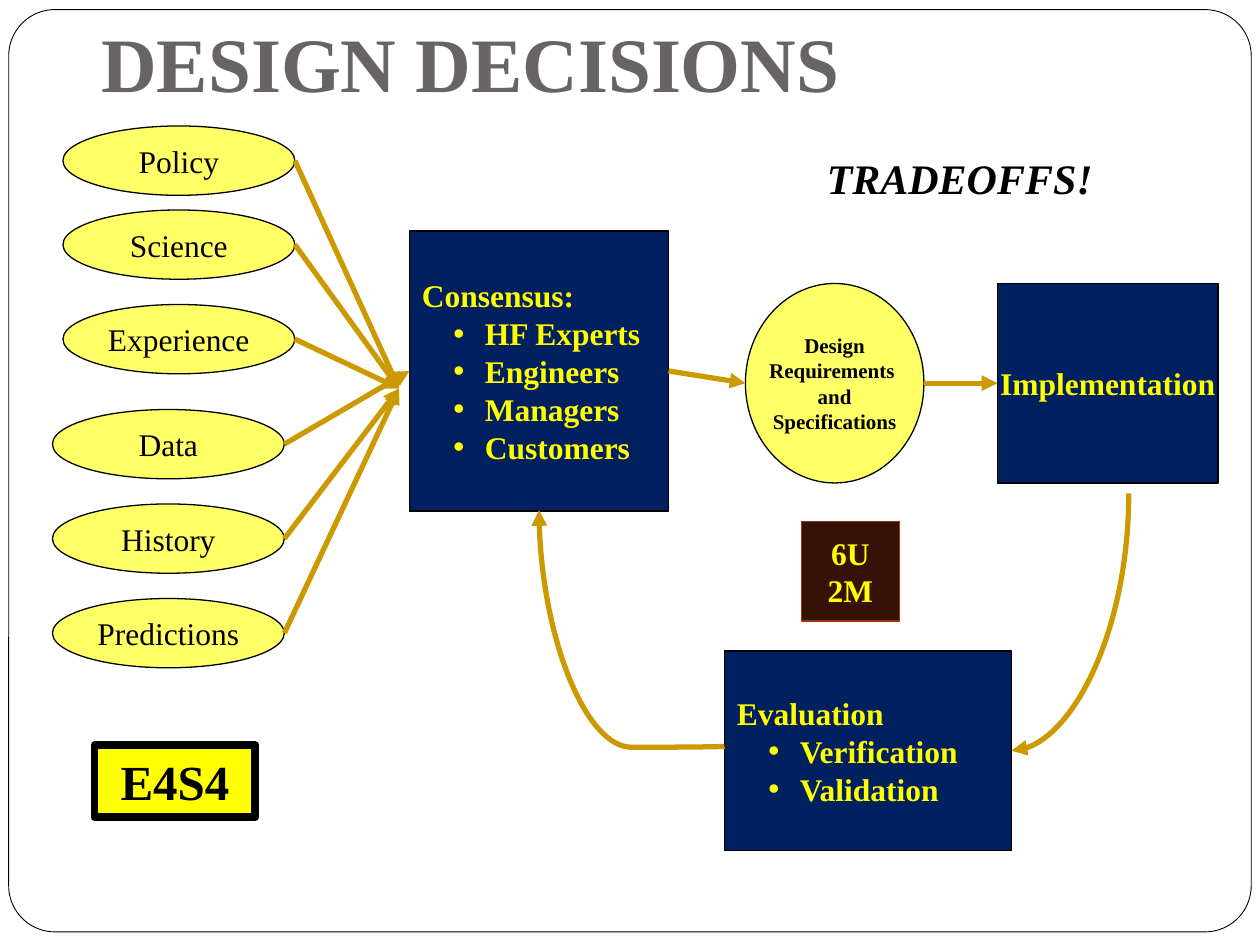
from lxml import etree
from pptx import Presentation
from pptx.dml.color import RGBColor
from pptx.enum.shapes import MSO_CONNECTOR, MSO_SHAPE
from pptx.enum.text import MSO_ANCHOR, MSO_AUTO_SIZE, PP_ALIGN
from pptx.oxml.ns import qn
from pptx.util import Pt

STRAIGHT, CURVE = MSO_CONNECTOR.STRAIGHT, MSO_CONNECTOR.CURVE
RECTANGLE, ELLIPSE = MSO_SHAPE.RECTANGLE, MSO_SHAPE.OVAL
ROUNDED = MSO_SHAPE.ROUNDED_RECTANGLE
LEFT, CENTER = PP_ALIGN.LEFT, PP_ALIGN.CENTER
TOP, MIDDLE = MSO_ANCHOR.TOP, MSO_ANCHOR.MIDDLE

FONT = "Times New Roman"
BLACK, WHITE, GREY = "000000", "FFFFFF", "696464"
NAVY, YELLOW, PALE_YELLOW, GOLD = "002060", "FFFF00", "FFFF66", "CC9900"
BROWN, RUST = "351206", "9C3511"


def color(hex_string):
    return RGBColor.from_string(hex_string)


def write(shape, lines, size=18, ink=BLACK, bold=False, italic=False,
          align=CENTER, anchor=MIDDLE, wrap=False):
    """Fill a shape with one paragraph a line; lines starting with • are bulleted."""
    frame = shape.text_frame
    frame.word_wrap = wrap
    frame.auto_size = MSO_AUTO_SIZE.NONE
    frame.vertical_anchor = anchor
    for index, line in enumerate(lines):
        paragraph = frame.add_paragraph() if index else frame.paragraphs[0]
        paragraph.alignment = align
        run = paragraph.add_run()
        run.text = line.removeprefix("•")
        run.font.name, run.font.size = FONT, Pt(size)
        run.font.bold, run.font.italic = bold, italic
        run.font.color.rgb = color(ink)
        if line.startswith("•"):
            paragraph.level = 1
            properties = paragraph._p.get_or_add_pPr()
            properties.set("marL", str(Pt(36)))
            properties.set("indent", str(Pt(-18)))
            etree.SubElement(properties, qn("a:buFont"), typeface="Arial")
            etree.SubElement(properties, qn("a:buChar"), char="•")


presentation = Presentation()
presentation.slide_width, presentation.slide_height = Pt(720), Pt(540)
slide = presentation.slides.add_slide(presentation.slide_layouts[5])
shapes = slide.shapes

title = shapes.title
title.left, title.top, title.width, title.height = Pt(42), Pt(18), Pt(454), Pt(34)
write(title, ["DESIGN DECISIONS"], size=44, ink=GREY, bold=True, wrap=True)

# Boxes: kind, position, fill, line colour, line width, lines of text, text format
INPUT_WIDTH, INPUT_HEIGHT = 132.5, 39.6
inputs = [("Policy", 36, 72), ("Science", 36, 120), ("Experience", 36, 174),
          ("Data", 30, 234), ("History", 30, 288), ("Predictions", 30, 342)]
heading = dict(ink=YELLOW, bold=True)
boxes = [
    (ROUNDED, (5, 5.5, 710, 527), WHITE, BLACK, 0.5, [], {}),
    (RECTANGLE, (234, 132, 148, 160), NAVY, BLACK, 0.75,
     ["Consensus:", "•HF Experts", "•Engineers", "•Managers", "•Customers"],
     dict(heading, align=LEFT)),
    (ELLIPSE, (426, 162, 102, 114), PALE_YELLOW, BLACK, 0.75,
     ["Design", "Requirements ", "and", "Specifications"], dict(size=12, bold=True)),
    (RECTANGLE, (570, 162, 126, 114), NAVY, BLACK, 0.75, ["Implementation"], heading),
    (RECTANGLE, (414, 372, 164, 114), NAVY, BLACK, 0.75,
     ["Evaluation", "•Verification", "•Validation"], dict(heading, align=LEFT)),
    (RECTANGLE, (54, 426, 92, 41), YELLOW, BLACK, 4.5, ["E4S4"],
     dict(size=28, bold=True, anchor=TOP, wrap=True)),
    (RECTANGLE, (458, 298, 56, 57), BROWN, RUST, 1, ["6U", "2M"],
     dict(heading, wrap=True)),
]
boxes += [(ELLIPSE, (left, top, INPUT_WIDTH, INPUT_HEIGHT), PALE_YELLOW, BLACK, 0.75,
           [name], {}) for name, left, top in inputs]

drawn = {}
for kind, place, fill, line, line_width, lines, text_format in boxes:
    shape = shapes.add_shape(kind, *map(Pt, place))
    shape.shadow.inherit = False
    shape.fill.solid()
    shape.fill.fore_color.rgb = color(fill)
    shape.line.color.rgb = color(line)
    shape.line.width = Pt(line_width)
    write(shape, lines, **text_format)
    drawn[lines[0] if lines else "frame"] = shape

drawn["frame"].adjustments[0] = 0.05
title._element.addprevious(drawn["frame"]._element)

tradeoffs = shapes.add_textbox(Pt(449), Pt(83.5), Pt(199), Pt(36))
write(tradeoffs, ["TRADEOFFS!"], size=24, bold=True, italic=True, anchor=TOP, wrap=True)

# Straight arrows: every input leads to the consensus, which leads onwards
arrows = []
for name, left, top in inputs:
    target = (234, 212) if name == "Data" else (228, 222)
    arrows.append((left + INPUT_WIDTH, top + INPUT_HEIGHT / 2, *target))
arrows += [(382, 212, 426, 219), (528, 219, 570, 219)]
connectors = [shapes.add_connector(STRAIGHT, *map(Pt, ends)) for ends in arrows]

# Curved arrows: place before the turn, then turn and flip
to_evaluation = shapes.add_connector(CURVE, Pt(645), Pt(282), Pt(578), Pt(429))
to_evaluation.end_connect(drawn["Evaluation"], 3)
to_consensus = shapes.add_connector(CURVE, Pt(414), Pt(426), Pt(308), Pt(292))
to_consensus.begin_connect(drawn["Evaluation"], 1)
to_consensus.end_connect(drawn["Consensus:"], 2)
curves = [
    (to_evaluation, (538, 322, 147, 67), 90, "0", "curvedConnector2", None),
    (to_consensus, (293.5, 306, 135, 106), 270, "1", "curvedConnector3", -400),
]
for connector, place, degrees, flip, preset, bend in curves:
    (connector.left, connector.top,
     connector.width, connector.height) = map(Pt, place)
    transform = connector._element.spPr.find(qn("a:xfrm"))
    transform.set("rot", str(degrees * 60000))
    transform.set("flipH", "0")
    transform.set("flipV", flip)
    geometry = connector._element.spPr.find(qn("a:prstGeom"))
    geometry.set("prst", preset)
    if bend is not None:
        etree.SubElement(geometry.find(qn("a:avLst")), qn("a:gd"),
                         name="adj1", fmla=f"val {bend}")
    connectors.append(connector)

for connector in connectors:
    connector.line.color.rgb = color(GOLD)
    connector.line.width = Pt(3)
    etree.SubElement(connector.line._get_or_add_ln(), qn("a:tailEnd"), type="triangle")
    etree.SubElement(connector._element.spPr, qn("a:effectLst"))

presentation.save("out.pptx")
